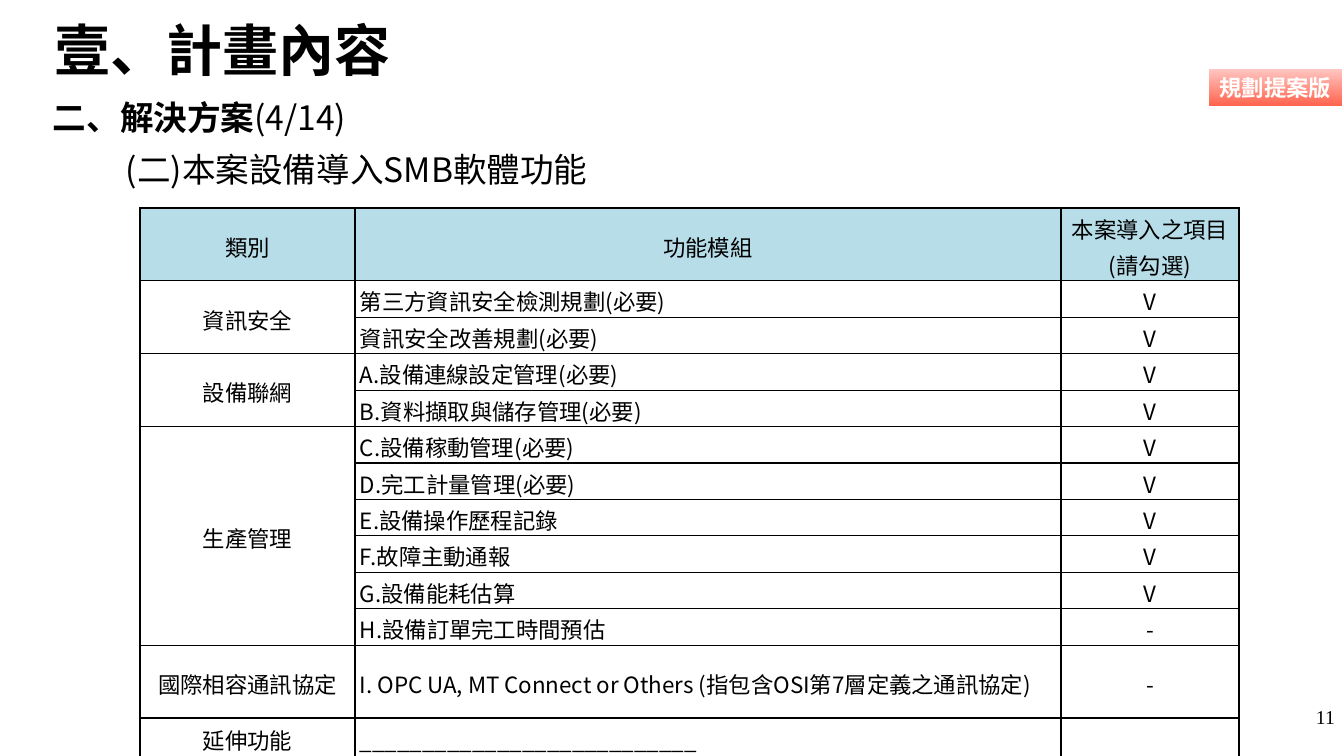
from pptx import Presentation
from pptx.dml.color import RGBColor
from pptx.enum.shapes import MSO_SHAPE as Shape
from pptx.enum.text import MSO_ANCHOR as Anchor, PP_ALIGN as Align
from pptx.oxml.ns import qn
from pptx.util import Pt
from lxml.etree import SubElement as Sub

SANS = "Noto Sans CJK SC"
SERIF = "Times New Roman"
BLACK, WHITE, BLUE = "000000", "FFFFFF", "B6DDE8"
BADGE = ("FF644E", "FFC6C2")

TITLE = "壹、計畫內容"
PART = ("二、解決方案", "(4/14)")
TOPIC = "(二)本案設備導入SMB軟體功能"
LABEL = "規劃提案版"
PAGE = "11"

HEAD = ("類別", "功能模組", "本案導入之項目(請勾選)")
GROUPS = [
    ("資訊安全", [("第三方資訊安全檢測規劃(必要)", "V"),
              ("資訊安全改善規劃(必要)", "V")]),
    ("設備聯網", [("A.設備連線設定管理(必要)", "V"),
              ("B.資料擷取與儲存管理(必要)", "V")]),
    ("生產管理", [("C.設備稼動管理(必要)", "V"),
              ("D.完工計量管理(必要)", "V"),
              ("E.設備操作歷程記錄", "V"),
              ("F.故障主動通報", "V"),
              ("G.設備能耗估算", "V"),
              ("H.設備訂單完工時間預估", "-")]),
    ("國際相容通訊協定", [("I. OPC UA, MT Connect or Others (指包含OSI第7層定義之通訊協定)", "-")]),
    ("延伸功能", [("___________________________", "")]),
]
COLS = (215, 706, 178)
HEAD_H, ROW_H, LAST_H = 68, 33, 39


def px(n):
    return round(n * 914400 / 100.8)


def rgb(code):
    return RGBColor.from_string(code)


def style(run, size, bold=False, color=BLACK, face=SANS):
    font = run.font
    font.size, font.bold, font.name = Pt(size), bold, face
    font.color.rgb = rgb(color)
    Sub(run._r.get_or_add_rPr(), qn("a:ea")).set("typeface", face)


def write(box, text, size, **look):
    para = box.text_frame.paragraphs[0]
    para.text = text
    style(para.runs[0], size, **look)
    return para


def add_text(slide, area, text, size, **look):
    box = slide.shapes.add_textbox(*map(px, area))
    box.text_frame.word_wrap = True
    write(box, text, size, **look)
    return box


def border(cell):
    props = cell._tc.get_or_add_tcPr()
    for i, side in enumerate(("lnL", "lnR", "lnT", "lnB")):
        line = props.makeelement(qn("a:" + side), {"w": str(Pt(1))})
        fill = Sub(line, qn("a:solidFill"))
        Sub(fill, qn("a:srgbClr")).set("val", BLACK)
        props.insert(i, line)


def fill_cell(cell, text, color, align):
    cell.fill.solid()
    cell.fill.fore_color.rgb = rgb(color)
    border(cell)
    cell.vertical_anchor = Anchor.MIDDLE
    cell.margin_left = cell.margin_right = px(5)
    cell.margin_top = cell.margin_bottom = 0
    if text:
        para = write(cell, text, 16)
        para.alignment = align
        para.line_spacing = Pt(26)


def add_grid(slide):
    rows = [HEAD]
    spans = []
    for name, items in GROUPS:
        spans.append((len(rows), len(rows) + len(items) - 1))
        for i, (item, mark) in enumerate(items):
            rows.append(("" if i else name, item, mark))
    tall = [HEAD_H] + [ROW_H] * (len(rows) - 2) + [LAST_H]
    area = (140, 208, sum(COLS), sum(tall))
    grid = slide.shapes.add_table(len(rows), len(COLS), *map(px, area)).table
    grid.first_row = grid.horz_banding = False
    for col, wide in zip(grid.columns, COLS):
        col.width = px(wide)
    for r, row in enumerate(rows):
        grid.rows[r].height = px(tall[r])
        for c, text in enumerate(row):
            align = Align.JUSTIFY if r and c == 1 else Align.CENTER
            fill_cell(grid.cell(r, c), text, WHITE if r else BLUE, align)
    for top, end in spans:
        if end > top:
            grid.cell(top, 0).merge(grid.cell(end, 0))


def add_badge(slide):
    badge = slide.shapes.add_shape(Shape.RECTANGLE, *map(px, (1209, 69, 133, 37)))
    badge.shadow.inherit = False
    badge.line.fill.background()
    badge.fill.gradient()
    badge.fill.gradient_angle = 90
    for stop, color in zip(badge.fill.gradient_stops, BADGE):
        stop.color.rgb = rgb(color)
    badge.text_frame.word_wrap = False
    write(badge, LABEL, 16, bold=True, color=WHITE).alignment = Align.CENTER


def main():
    deck = Presentation()
    deck.slide_width, deck.slide_height = px(1344), px(756)
    slide = deck.slides.add_slide(deck.slide_layouts[6])
    add_badge(slide)
    add_text(slide, (116, 144, 826, 51), TOPIC, 24)
    add_grid(slide)
    title = add_text(slide, (45, 9, 1271, 80), TITLE, 40, bold=True)
    title.text_frame.vertical_anchor = Anchor.MIDDLE
    part = add_text(slide, (43, 92, 1263, 51), PART[0], 24, bold=True)
    run = part.text_frame.paragraphs[0].add_run()
    run.text = PART[1]
    style(run, 24)
    page = add_text(slide, (1307, 699, 37, 35), PAGE, 14, face=SERIF)
    frame = page.text_frame
    frame.word_wrap = False
    frame.margin_left = frame.margin_right = px(6)
    frame.margin_top = frame.margin_bottom = px(6)
    frame.paragraphs[0].alignment = Align.CENTER
    deck.save("out.pptx")


if __name__ == "__main__":
    main()
